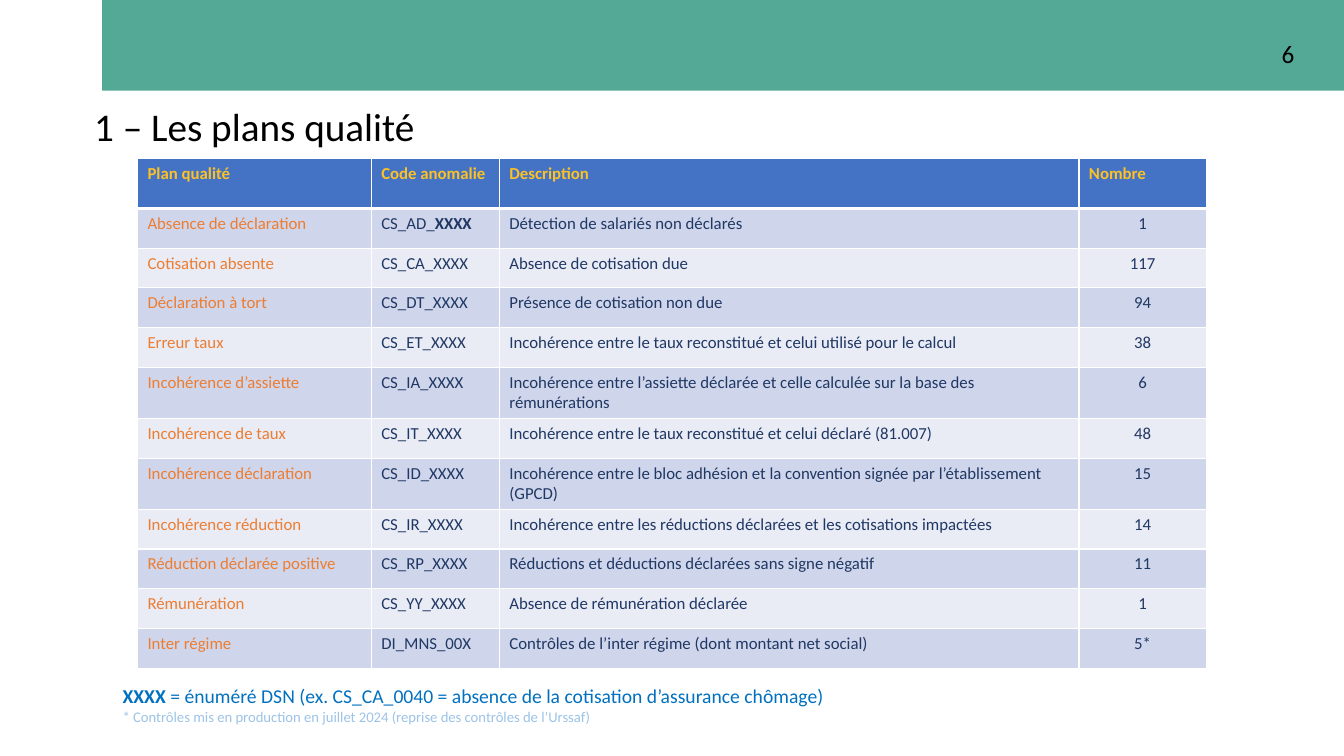
import dataclasses

import lxml.etree
import pptx
import pptx.dml.color
import pptx.enum.shapes
import pptx.enum.text
import pptx.oxml.ns
import pptx.slide
import pptx.table
import pptx.text.text
import pptx.util

Pt = pptx.util.Pt
ALIGN = pptx.enum.text.PP_ALIGN

COLORS = {
    "band": "54A996",
    "black": "000000",
    "white": "FFFFFF",
    "header": "4472C4",
    "header_text": "FBC127",
    "odd_row": "CFD5EA",
    "even_row": "E9EBF5",
    "plan": "ED7D31",
    "cell_text": "203864",
    "legend": "0070C0",
    "footnote": "9DC3E6",
}

COLUMN_WIDTHS = (167, 91.5, 414, 91)
HEADER_HEIGHT = 35.7
ROW_HEIGHT = 28.4
TWO_LINE_HEIGHT = 36


@dataclasses.dataclass(frozen=True)
class QualityPlan:
    name: str
    code: str
    description: str
    count: str
    bold_code: str = ""
    height: float = ROW_HEIGHT


HEADINGS = ("Plan qualité", "Code anomalie", "Description", "Nombre")
PLANS = (
    QualityPlan("Absence de déclaration", "CS_AD_", "Détection de salariés non déclarés", "1",
                bold_code="XXXX"),
    QualityPlan("Cotisation absente", "CS_CA_XXXX", "Absence de cotisation due", "117"),
    QualityPlan("Déclaration à tort", "CS_DT_XXXX", "Présence de cotisation non due", "94"),
    QualityPlan("Erreur taux", "CS_ET_XXXX",
                "Incohérence entre le taux reconstitué et celui utilisé pour le calcul", "38"),
    QualityPlan("Incohérence d’assiette", "CS_IA_XXXX",
                "Incohérence entre l’assiette déclarée et celle calculée sur la base des "
                "rémunérations", "6", height=TWO_LINE_HEIGHT),
    QualityPlan("Incohérence de taux", "CS_IT_XXXX",
                "Incohérence entre le taux reconstitué et celui déclaré (81.007)", "48"),
    QualityPlan("Incohérence déclaration", "CS_ID_XXXX",
                "Incohérence entre le bloc adhésion et la convention signée par "
                "l’établissement (GPCD)", "15", height=TWO_LINE_HEIGHT),
    QualityPlan("Incohérence réduction", "CS_IR_XXXX",
                "Incohérence entre les réductions déclarées et les cotisations impactées", "14"),
    QualityPlan("Réduction déclarée positive", "CS_RP_XXXX",
                "Réductions et déductions déclarées sans signe négatif", "11"),
    QualityPlan("Rémunération", "CS_YY_XXXX", "Absence de rémunération déclarée", "1"),
    QualityPlan("Inter régime", "DI_MNS_00X",
                "Contrôles de l’inter régime (dont montant net social)", "5*"),
)


def rgb(name: str) -> pptx.dml.color.RGBColor:
    return pptx.dml.color.RGBColor.from_string(COLORS[name])


def write(paragraph: pptx.text.text._Paragraph, text: str, *, color: str, size: float = 12,
          bold: bool = False, align: ALIGN = ALIGN.LEFT) -> None:
    """Append one formatted run to the paragraph."""
    paragraph.alignment = align
    run = paragraph.add_run()
    run.text = text
    run.font.name = "Calibri"
    run.font.size = Pt(size)
    run.font.bold = bold
    run.font.color.rgb = rgb(color)


def style_cell(cell: pptx.table._Cell, fill: str, *, top: float = 1, bottom: float = 1) -> None:
    """Fill the cell and give it white borders, with widths in points."""
    qn = pptx.oxml.ns.qn
    properties = cell._tc.get_or_add_tcPr()
    for side, width in (("lnL", 1), ("lnR", 1), ("lnT", top), ("lnB", bottom)):
        border = lxml.etree.SubElement(properties, qn(f"a:{side}"), w=str(Pt(width)))
        solid = lxml.etree.SubElement(border, qn("a:solidFill"))
        lxml.etree.SubElement(solid, qn("a:srgbClr"), val=COLORS["white"])
    cell.fill.solid()
    cell.fill.fore_color.rgb = rgb(fill)


def add_band(slide: pptx.slide.Slide) -> None:
    band = slide.shapes.add_shape(pptx.enum.shapes.MSO_SHAPE.RECTANGLE,
                                  Pt(73), Pt(0), Pt(887), Pt(64.8))
    band.shadow.inherit = False
    band.fill.solid()
    band.fill.fore_color.rgb = rgb("band")
    band.line.fill.background()


def fill_title(slide: pptx.slide.Slide) -> None:
    title = slide.shapes.title
    title.left, title.top, title.width, title.height = Pt(60), Pt(73.5), Pt(826), Pt(54.5)
    frame = title.text_frame
    frame.vertical_anchor = pptx.enum.text.MSO_ANCHOR.TOP
    frame.auto_size = pptx.enum.text.MSO_AUTO_SIZE.NONE
    frame.paragraphs[0].line_spacing = 0.9
    write(frame.paragraphs[0], "1 – Les plans qualité", color="black", size=28)


def add_plan_table(slide: pptx.slide.Slide) -> None:
    heights = [HEADER_HEIGHT] + [plan.height for plan in PLANS]
    table = slide.shapes.add_table(len(heights), len(COLUMN_WIDTHS), Pt(98.2), Pt(113.2),
                                   Pt(sum(COLUMN_WIDTHS)), Pt(sum(heights))).table
    for column, width in zip(table.columns, COLUMN_WIDTHS):
        column.width = Pt(width)
    for row, height in zip(table.rows, heights):
        row.height = Pt(height)

    for column, heading in enumerate(HEADINGS):
        cell = table.cell(0, column)
        style_cell(cell, "header", bottom=3)
        write(cell.text_frame.paragraphs[0], heading, color="header_text", bold=True)

    for row, plan in enumerate(PLANS, start=1):
        cells = [table.cell(row, column) for column in range(len(COLUMN_WIDTHS))]
        for cell in cells:
            style_cell(cell, "odd_row" if row % 2 else "even_row", top=3 if row == 1 else 1)
        name, code, description, count = (cell.text_frame.paragraphs[0] for cell in cells)
        write(name, plan.name, color="plan")
        write(code, plan.code, color="cell_text")
        if plan.bold_code:
            write(code, plan.bold_code, color="cell_text", bold=True)
        write(description, plan.description, color="cell_text")
        write(count, plan.count, color="cell_text", align=ALIGN.CENTER)


def add_text_frame(slide: pptx.slide.Slide, left: float, top: float, width: float,
                   height: float) -> pptx.text.text.TextFrame:
    frame = slide.shapes.add_textbox(Pt(left), Pt(top), Pt(width), Pt(height)).text_frame
    frame.word_wrap = True
    return frame


def add_legend(slide: pptx.slide.Slide) -> None:
    legend = add_text_frame(slide, 80.5, 485.3, 757.5, 36.7)
    codes = legend.paragraphs[0]
    write(codes, "XXXX", color="legend", size=14, bold=True)
    write(codes, " = énuméré DSN (ex. CS_CA_0040 = absence de la cotisation d’assurance chômage)",
          color="legend", size=14)
    write(legend.add_paragraph(),
          "* Contrôles mis en production en juillet 2024 (reprise des contrôles de l’Urssaf)",
          color="footnote", size=10.5)


def add_page_number(slide: pptx.slide.Slide) -> None:
    number = add_text_frame(slide, 715.7, 23.8, 216, 16.6)
    write(number.paragraphs[0], "6", color="black", size=18, align=ALIGN.RIGHT)


def main() -> None:
    presentation = pptx.Presentation()
    presentation.slide_width, presentation.slide_height = Pt(960), Pt(540)
    slide = presentation.slides.add_slide(presentation.slide_layouts.get_by_name("Title Only"))
    add_band(slide)
    add_plan_table(slide)
    add_legend(slide)
    fill_title(slide)
    add_page_number(slide)
    presentation.save("out.pptx")


if __name__ == "__main__":
    main()
